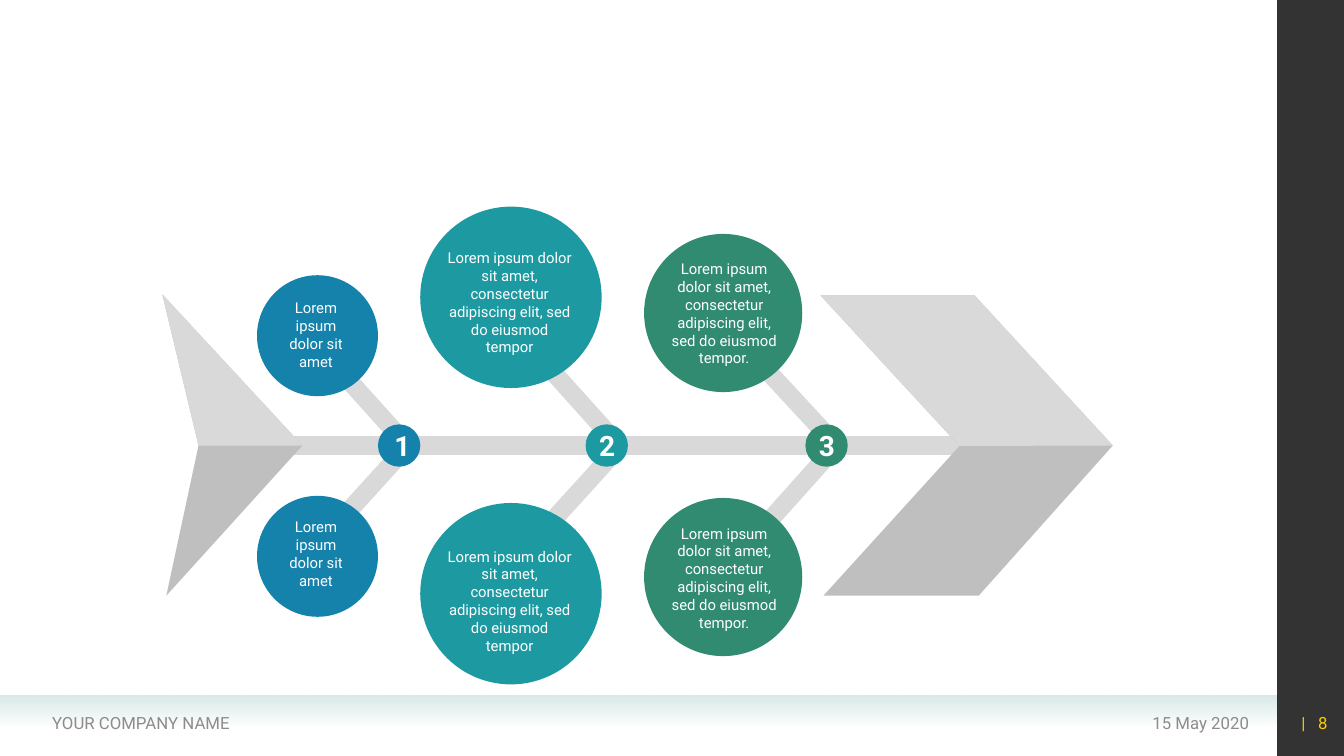
from dataclasses import dataclass
from typing import Any, NamedTuple

from lxml import etree
from pptx import Presentation
from pptx.dml.color import RGBColor
from pptx.enum import shapes, text
from pptx.oxml import ns
from pptx.util import Pt


@dataclass(frozen=True)
class Theme:
    font: str = "Roboto"
    white: str = "FFFFFF"
    light: str = "D9D9D9"
    dark: str = "BFBFBF"
    muted: str = "8C8C8C"
    accent: str = "FFCC00"
    band: str = "D9E9E8"
    sidebar: str = "000000"
    body: float = 10.6
    footer: float = 12
    number: float = 20
    bone: float = 13


class Point(NamedTuple):
    x: float
    y: float


class Box(NamedTuple):
    left: float
    top: float
    width: float
    height: float


class Branch(NamedTuple):
    circle_y: float
    label_y: float
    start: Point
    end: Point


class Stage(NamedTuple):
    number: str
    color: str
    message: str
    node_x: float
    circle_x: float
    diameter: float
    label_x: float
    label_width: float
    label_height: float
    number_width: float
    branches: tuple[Branch, Branch]


class Outline(NamedTuple):
    color: str
    points: tuple[Point, ...]


class Footer(NamedTuple):
    runs: tuple[str, ...]
    left: float
    width: float
    align: Any
    color: str


T = Theme()
SPINE_Y = 318.24
NODE_SIZE = 30.24
LOREM = "Lorem ipsum dolor sit amet"
LONG = f"{LOREM}, consectetur adipiscing elit, sed do eiusmod tempor"

STAGES = (
    Stage("1", "1482AB", LOREM, 285.1, 226.8, 86.4, 225.7, 71.3, 46, 20.9, (
        Branch(239.8, 239, Point(292.3, 319.7), Point(201.6, 218.9)),
        Branch(397.4, 395.3, Point(197.3, 421.9), Point(290.2, 319.7)))),
    Stage("2", "1D9AA1", LONG, 433.4, 365, 129.6, 364, 104.4, 85, 25.2, (
        Branch(212.4, 216, Point(342.7, 207.4), Point(442.8, 319)),
        Branch(424.1, 429.1, Point(342, 429.8), Point(442.1, 319.7)))),
    Stage("3", "318B71", f"{LONG}.", 590.4, 516.6, 113, 517.3, 98.6, 85, 25.2, (
        Branch(223.6, 223.9, Point(498.2, 211), Point(598.3, 319)),
        Branch(412.2, 412.6, Point(499, 428.4), Point(598.3, 317.5)))),
)

HEAD_TIP = Point(794.9, SPINE_Y)
HEAD_TOP = (Point(696.2, 211), Point(586.1, 211))
HEAD_NOTCH = Point(685.4, 318.6)
TAIL_TIP = Point(216, SPINE_Y)
TAIL_TOP = Point(115.9, 210.2)
TAIL_NOTCH = Point(141.8, SPINE_Y)

OUTLINES = (
    Outline(T.dark, (Point(588.2, 425.5), Point(699.1, 425.5), HEAD_TIP, *HEAD_TOP, HEAD_NOTCH)),
    Outline(T.dark, (TAIL_TIP, TAIL_TOP, TAIL_NOTCH, Point(118.8, 425.5))),
    Outline(T.light, (HEAD_TIP, *HEAD_TOP, HEAD_NOTCH)),
    Outline(T.light, (TAIL_TIP, TAIL_TOP, TAIL_NOTCH)),
)

FOOTERS = (
    Footer(("15 May 2020",), 655.2, 244.1, text.PP_ALIGN.RIGHT, T.muted),
    Footer(("YOUR COMPANY NAME",), 30.2, 352.8, text.PP_ALIGN.LEFT, T.muted),
    Footer(("|", " ", "8"), 907.2, 48.2, text.PP_ALIGN.RIGHT, T.accent),
)


def apply(target: Any, values: dict[str, Any]) -> None:
    for name, value in values.items():
        setattr(target, name, value)


def rgb(color: str) -> RGBColor:
    return RGBColor.from_string(color)


def centered(x: float, y: float, width: float, height: float) -> Box:
    return Box(x - width / 2, y - height / 2, width, height)


def set_alpha(color: Any, percent: int) -> None:
    etree.SubElement(color, ns.qn("a:alpha")).set("val", str(percent * 1000))


def paint(sp: Any, color: str) -> None:
    sp.shadow.inherit = False
    sp.line.fill.background()
    sp.fill.solid()
    sp.fill.fore_color.rgb = rgb(color)


def add_preset(slide: Any, kind: Any, box: Box, color: str) -> Any:
    sp = slide.shapes.add_shape(kind, *map(Pt, box))
    paint(sp, color)
    return sp


def add_outline(slide: Any, outline: Outline) -> None:
    first, *rest = [(Pt(x), Pt(y)) for x, y in outline.points]
    builder = slide.shapes.build_freeform(*first)
    builder.add_line_segments(rest, close=True)
    paint(builder.convert_to_shape(), outline.color)


def add_bone(slide: Any, start: Point, end: Point) -> None:
    line = slide.shapes.add_connector(shapes.MSO_CONNECTOR.STRAIGHT, *map(Pt, (*start, *end)))
    line.line.color.rgb = rgb(T.light)
    line.line.width = Pt(T.bone)
    etree.SubElement(line._element.spPr, ns.qn("a:effectLst"))


def add_text(slide: Any, box: Box, runs: tuple[str, ...], size: float, color: str,
             frame: dict[str, Any], paragraph: dict[str, Any], bold: bool = False) -> Any:
    tf = slide.shapes.add_textbox(*map(Pt, box)).text_frame
    apply(tf, {"word_wrap": True, "vertical_anchor": text.MSO_ANCHOR.MIDDLE, **frame})
    p = tf.paragraphs[0]
    apply(p, paragraph)
    for content in runs:
        r = p.add_run()
        r.text = content
        apply(r.font, {"name": T.font, "size": Pt(size), "bold": bold})
        r.font.color.rgb = rgb(color)
    return p


def add_master(slide: Any) -> None:
    band = add_preset(slide, shapes.MSO_SHAPE.RECTANGLE, Box(0, 496.8, 912.2, 22.3), T.band)
    band.fill.gradient()
    band.fill.gradient_angle = 270
    for stop, position in zip(band.fill.gradient_stops, (0, 1)):
        stop.position = position
        stop.color.rgb = rgb(T.band)
    set_alpha(list(band._element.spPr.iter(ns.qn("a:srgbClr")))[-1], 0)
    sidebar = add_preset(slide, shapes.MSO_SHAPE.RECTANGLE, Box(912.2, 0, 47.8, 540), T.sidebar)
    set_alpha(next(sidebar._element.spPr.iter(ns.qn("a:srgbClr"))), 80)
    for item in FOOTERS:
        p = add_text(slide, Box(item.left, 501.8, item.width, 28.8), item.runs,
                     T.footer, item.color, {}, {"alignment": item.align})
        for r in p.runs:
            if r.text == " ":
                r._r.get_or_add_rPr().set("spc", "600")


def add_stage(slide: Any, stage: Stage) -> None:
    oval = shapes.MSO_SHAPE.OVAL
    grow = {"auto_size": text.MSO_AUTO_SIZE.SHAPE_TO_FIT_TEXT}
    center = {"alignment": text.PP_ALIGN.CENTER}
    for branch in stage.branches:
        add_bone(slide, branch.start, branch.end)
        add_preset(slide, oval, centered(stage.circle_x, branch.circle_y, stage.diameter,
                                         stage.diameter), stage.color)
        add_text(slide, centered(stage.label_x, branch.label_y, stage.label_width,
                                 stage.label_height), (stage.message,), T.body, T.white,
                 {**grow, "margin_left": Pt(7.9), "margin_right": Pt(7.9)},
                 {**center, "space_before": Pt(2.1)})
    add_preset(slide, oval, centered(stage.node_x, SPINE_Y, NODE_SIZE, NODE_SIZE), stage.color)
    add_text(slide, centered(stage.node_x, SPINE_Y, stage.number_width, 31.7), (stage.number,),
             T.number, T.white, {**grow, "word_wrap": False}, center, bold=True)


def main() -> None:
    prs = Presentation()
    apply(prs, {"slide_width": Pt(960), "slide_height": Pt(540)})
    slide = prs.slides.add_slide(prs.slide_layouts[6])
    add_master(slide)
    add_bone(slide, Point(190.8, SPINE_Y), Point(692.6, SPINE_Y))
    for outline in OUTLINES:
        add_outline(slide, outline)
    for stage in STAGES:
        add_stage(slide, stage)
    prs.save("out.pptx")


if __name__ == "__main__":
    main()
